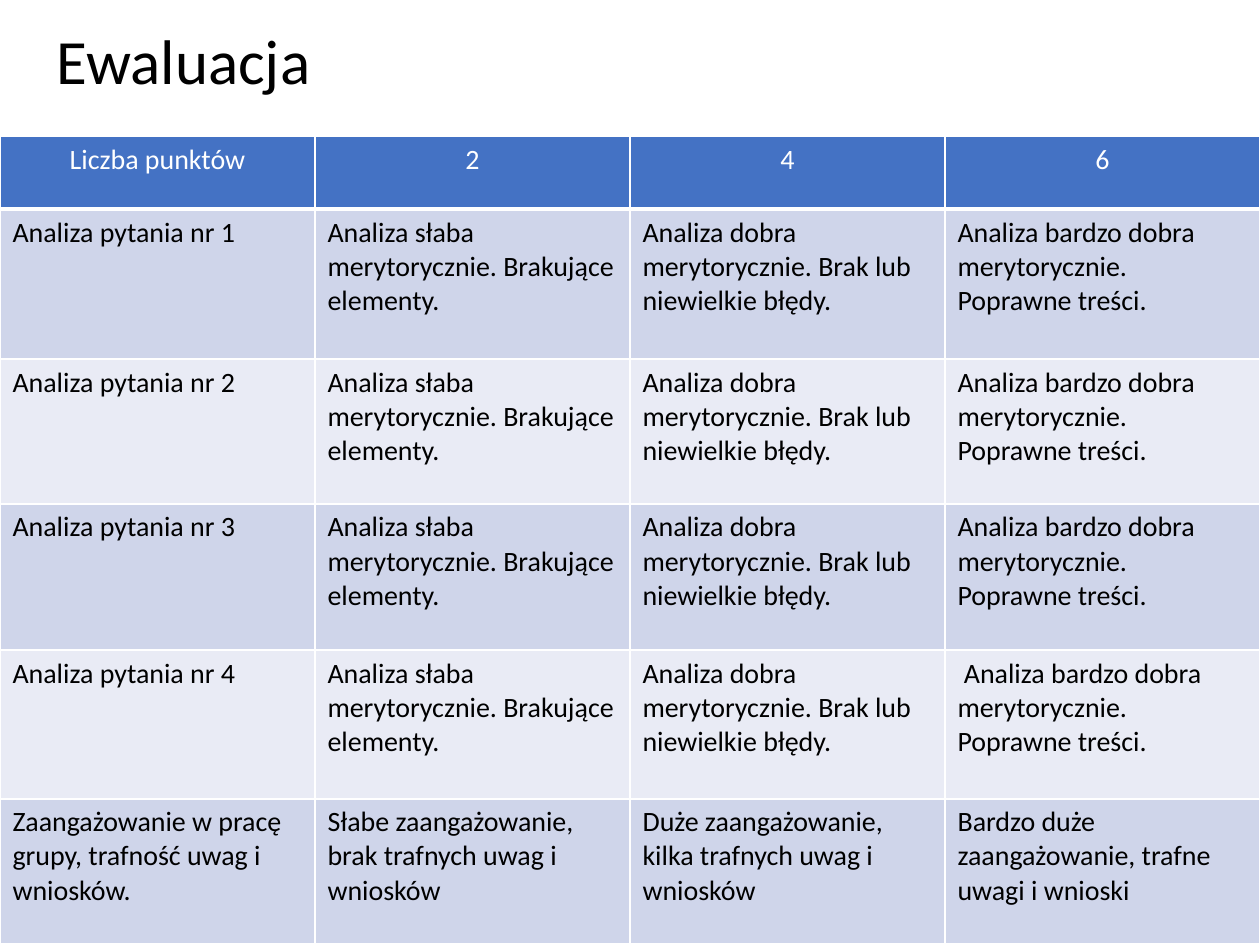
from lxml.etree import SubElement
from pptx import Presentation
from pptx.dml.color import RGBColor as RGB
from pptx.enum.text import MSO_ANCHOR as ANCHOR, PP_ALIGN as ALIGN
from pptx.oxml.ns import qn
from pptx.util import Inches, Pt

TITLE = "Ewaluacja"
HEADER = ["Liczba punktów", "2", "4", "6"]
GRADES = [
    "Analiza słaba merytorycznie. Brakujące elementy.",
    "Analiza dobra merytorycznie. Brak lub niewielkie błędy.",
    "Analiza bardzo dobra merytorycznie. Poprawne treści.",
]
QUESTIONS = [[f"Analiza pytania nr {n}", *GRADES] for n in range(1, 5)]
QUESTIONS[-1][-1] = " " + GRADES[-1]
TEAMWORK = [
    "Zaangażowanie w pracę grupy, trafność uwag i wniosków.",
    "Słabe zaangażowanie, brak trafnych uwag i wniosków",
    "Duże zaangażowanie, kilka trafnych uwag i wniosków",
    "Bardzo duże zaangażowanie, trafne uwagi i wnioski",
]
ROWS = [HEADER, *QUESTIONS, TEAMWORK]
ROW_HEIGHTS = [0.58, 1.19, 1.15, 1.16, 1.18, 1.15]
TABLE_TOP = 1.08
SLIDE_W, SLIDE_H = 10, 7.5

THEME = {
    "font": "Calibri", "title_size": 36, "cell_size": 16,
    "text": "000000", "header_text": "FFFFFF", "header": "4472C4",
    "bands": ["E9EBF5", "CFD5EA"], "border": "FFFFFF",
    "border_pt": 1, "header_rule_pt": 3,
}


def style_text(p, size, color):
    p.font.name = THEME["font"]
    p.font.size = Pt(size)
    p.font.color.rgb = RGB.from_string(color)


def add_borders(cell, bottom_pt):
    tc_pr = cell._tc.get_or_add_tcPr()
    for side in "LRTB":
        width = bottom_pt if side == "B" else THEME["border_pt"]
        ln = SubElement(tc_pr, qn(f"a:ln{side}"), w=str(Pt(width)))
        fill = SubElement(ln, qn("a:solidFill"))
        SubElement(fill, qn("a:srgbClr"), val=THEME["border"])


def fill_cell(cell, text, row):
    is_header = row == 0
    cell.text = text
    p = cell.text_frame.paragraphs[0]
    p.alignment = ALIGN.CENTER if is_header else ALIGN.LEFT
    style_text(p, THEME["cell_size"], THEME["header_text" if is_header else "text"])
    add_borders(cell, THEME["header_rule_pt" if is_header else "border_pt"])
    color = THEME["header"] if is_header else THEME["bands"][row % 2]
    cell.fill.solid()
    cell.fill.fore_color.rgb = RGB.from_string(color)


def add_title(s):
    box = s.shapes.add_textbox(Inches(0.35), 0, Inches(9), Inches(1.02))
    tf = box.text_frame
    tf.word_wrap = True
    tf.vertical_anchor = ANCHOR.MIDDLE
    tf.text = TITLE
    p = tf.paragraphs[0]
    p.line_spacing = 0.9
    style_text(p, THEME["title_size"], THEME["text"])


def add_rubric(s):
    table = s.shapes.add_table(
        len(ROWS), len(HEADER), 0, Inches(TABLE_TOP),
        Inches(SLIDE_W), Inches(sum(ROW_HEIGHTS))).table
    for column in table.columns:
        column.width = Inches(SLIDE_W / len(HEADER))
    for r, (height, texts) in enumerate(zip(ROW_HEIGHTS, ROWS)):
        table.rows[r].height = Inches(height)
        for c, text in enumerate(texts):
            fill_cell(table.cell(r, c), text, r)


def main():
    prs = Presentation()
    prs.slide_width, prs.slide_height = Inches(SLIDE_W), Inches(SLIDE_H)
    s = prs.slides.add_slide(prs.slide_layouts[6])
    add_title(s)
    add_rubric(s)
    prs.save("out.pptx")


if __name__ == "__main__":
    main()
